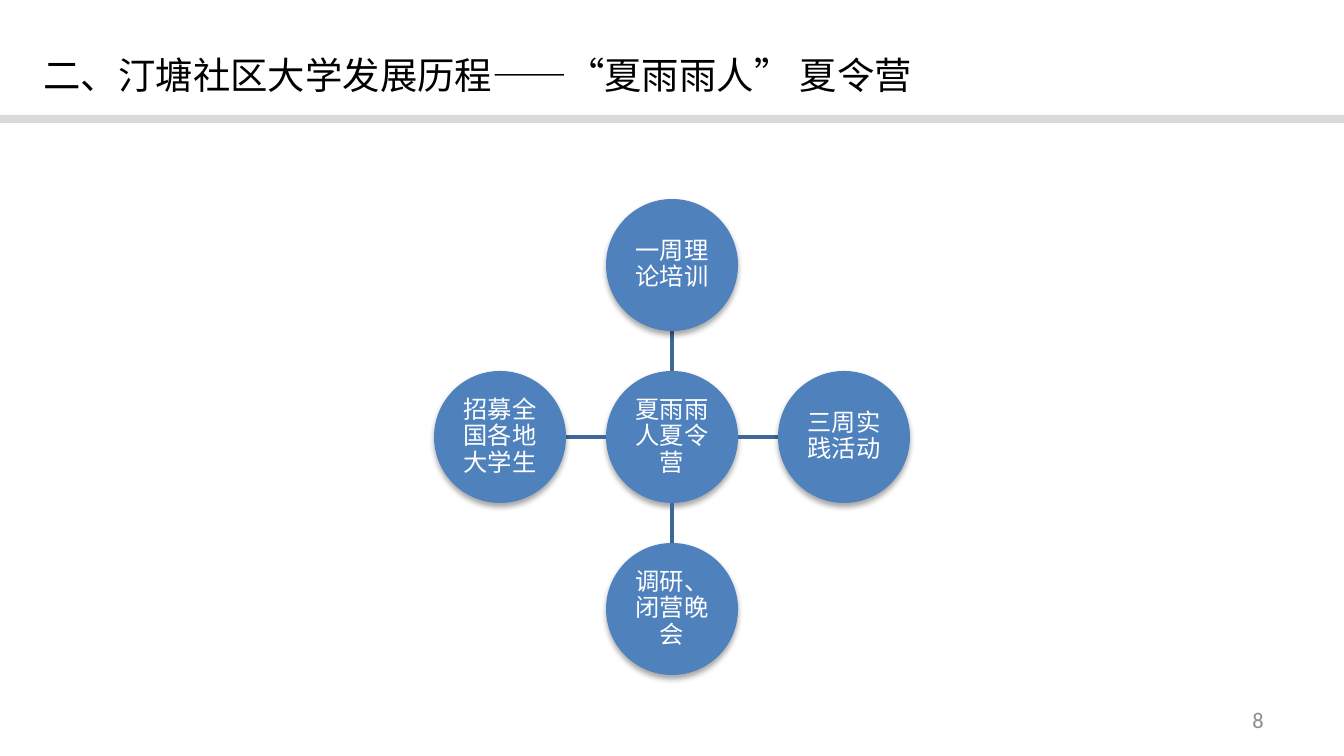
from lxml import etree
from pptx import Presentation
from pptx.dml.color import RGBColor
from pptx.enum.shapes import MSO_CONNECTOR, MSO_SHAPE
from pptx.enum.text import MSO_ANCHOR, MSO_AUTO_SIZE, PP_ALIGN
from pptx.oxml import parse_xml
from pptx.oxml.ns import nsdecls, qn
from pptx.util import Emu, Pt

EMU_PER_PX = 914400 / 134.4
COLORS = {
    "title": "000000",
    "rule": "D9D9D9",
    "circle": "4F81BD",
    "spoke": "3F6797",
    "label": "FFFFFF",
    "number": "8C8C8C",
    "shadow": "000000",
}
CENTER_X, CENTER_Y = 672, 437
DIAMETER = 132
SPACING = 172
HUB = "夏雨雨人夏令营"
# Label and direction (x, y) from the hub
SATELLITES = [
    ("一周理论培训", 0, -1),
    ("三周实践活动", 1, 0),
    ("调研、闭营晚会", 0, 1),
    ("招募全国各地大学生", -1, 0),
]


def px(*lengths):
    return [Emu(round(length * EMU_PER_PX)) for length in lengths]


def rgb(name):
    return RGBColor.from_string(COLORS[name])


def write_text(frame, text, size, font, color, align):
    frame.word_wrap = True
    frame.auto_size = MSO_AUTO_SIZE.NONE
    frame.vertical_anchor = MSO_ANCHOR.MIDDLE
    paragraph = frame.paragraphs[0]
    paragraph.alignment = align
    run = paragraph.add_run()
    run.text = text
    run.font.size = Pt(size)
    run.font.name = font
    run.font.color.rgb = rgb(color)
    return paragraph


def add_filled_shape(slide, kind, box, color):
    shape = slide.shapes.add_shape(kind, *px(*box))
    shape.shadow.inherit = False
    shape.fill.solid()
    shape.fill.fore_color.rgb = rgb(color)
    shape.line.fill.background()
    return shape


def add_soft_shadow(shape):
    effects = shape._element.spPr.find(qn("a:effectLst"))
    effects.append(parse_xml(
        f'<a:outerShdw {nsdecls("a")} blurRad="{Pt(3.1)}" dist="{Pt(1.8)}" '
        f'dir="5400000" rotWithShape="0"><a:srgbClr val="{COLORS["shadow"]}">'
        '<a:alpha val="35000"/></a:srgbClr></a:outerShdw>'))


def add_circle(slide, label, x, y):
    """Add a labelled circle centred on x, y."""
    radius = DIAMETER // 2
    box = (x - radius, y - radius, DIAMETER, DIAMETER)
    circle = add_filled_shape(slide, MSO_SHAPE.OVAL, box, "circle")
    add_soft_shadow(circle)
    frame = circle.text_frame
    frame.margin_left, frame.margin_top, frame.margin_right, frame.margin_bottom = px(1, 1, 1, 1)
    paragraph = write_text(frame, label, 13, "Calibri", "label", PP_ALIGN.CENTER)
    paragraph.line_spacing = 0.9


def add_spoke(slide, dx, dy):
    """Join the hub's edge to the edge of the satellite in direction dx, dy."""
    near, far = DIAMETER // 2, SPACING - DIAMETER // 2
    spoke = slide.shapes.add_connector(MSO_CONNECTOR.STRAIGHT, *px(
        CENTER_X + dx * near, CENTER_Y + dy * near,
        CENTER_X + dx * far, CENTER_Y + dy * far))
    spoke.line.color.rgb = rgb("spoke")
    spoke.line.width = Pt(2)
    etree.SubElement(spoke._element.spPr, qn("a:effectLst"))


def add_title(slide, text):
    title = slide.shapes.title
    title.left, title.top, title.width, title.height = px(0, 42, 956, 65)
    write_text(title.text_frame, text, 20, "Arial", "title", PP_ALIGN.CENTER)


def add_slide_number(slide, number):
    box = slide.shapes.add_textbox(*px(964, 700, 313, 40))
    write_text(box.text_frame, number, 12, "Calibri", "number", PP_ALIGN.RIGHT)


def main():
    presentation = Presentation()
    presentation.slide_width, presentation.slide_height = px(1344, 756)
    slide = presentation.slides.add_slide(presentation.slide_layouts[5])

    add_slide_number(slide, "8")
    add_filled_shape(slide, MSO_SHAPE.RECTANGLE, (0, 115, 1344, 8), "rule")
    add_title(slide, "二、汀塘社区大学发展历程——“夏雨雨人” 夏令营")

    add_circle(slide, HUB, CENTER_X, CENTER_Y)
    for label, dx, dy in SATELLITES:
        add_spoke(slide, dx, dy)
        add_circle(slide, label, CENTER_X + dx * SPACING, CENTER_Y + dy * SPACING)

    presentation.save("out.pptx")


if __name__ == "__main__":
    main()
